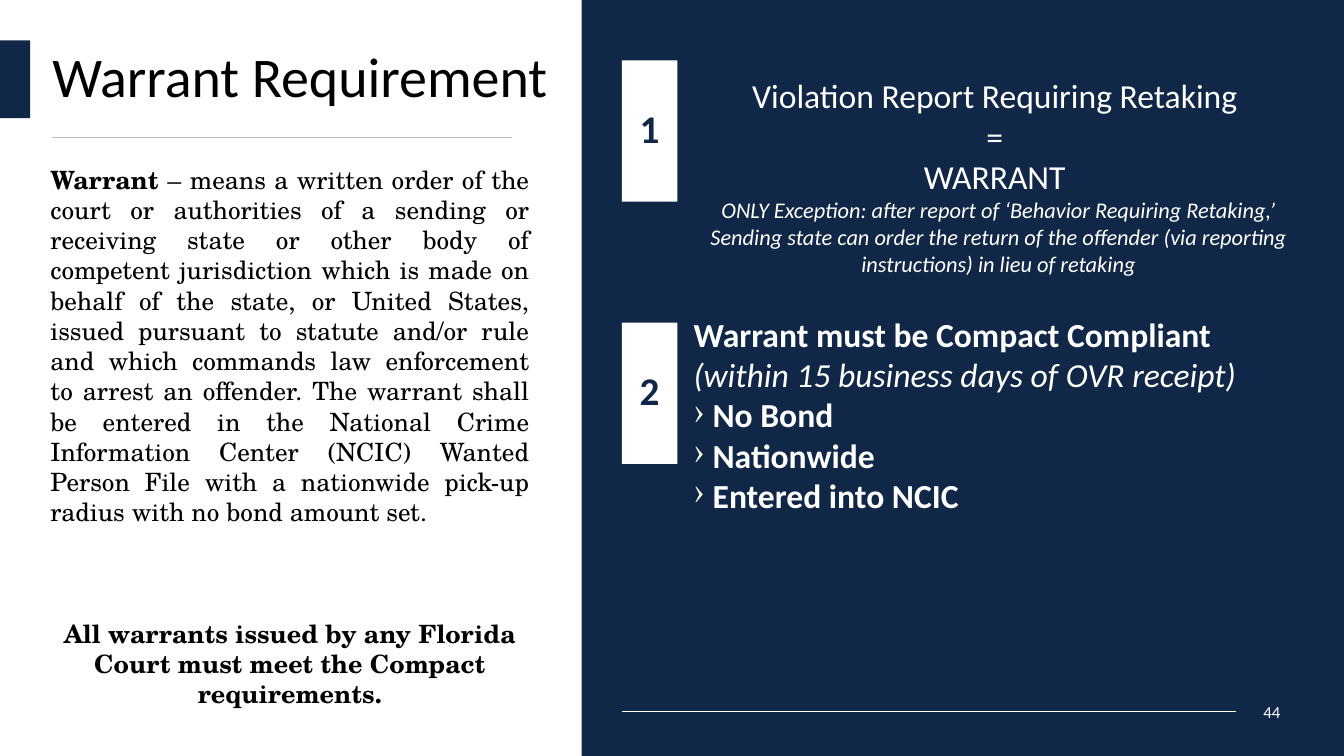
from lxml.etree import SubElement
from pptx import Presentation
from pptx.dml.color import RGBColor
from pptx.enum.shapes import MSO_CONNECTOR as Link, MSO_SHAPE as Shape
from pptx.enum.text import MSO_ANCHOR as Anchor, PP_ALIGN as Align
from pptx.oxml.ns import qn
from pptx.util import Cm, Pt

NAVY, WHITE, BLACK, GREY = "102747", "FFFFFF", "000000", "BFBFBF"
SANS, SERIF = "Calibri", "TeX Gyre Schola"
WIDE, HIGH = 33.87, 19.05


def color(code):
    return RGBColor.from_string(code)


def block(slide, box, fill):
    shape = slide.shapes.add_shape(Shape.RECTANGLE, *map(Cm, box))
    shape.shadow.inherit = False
    shape.fill.solid()
    shape.fill.fore_color.rgb = color(fill)
    shape.line.fill.background()
    return shape


def rule(slide, left, right, y, shade):
    line = slide.shapes.add_connector(Link.STRAIGHT, Cm(left), Cm(y), Cm(right), Cm(y))
    line.line.color.rgb = color(shade)
    line.line.width = Pt(0.5)
    SubElement(line._element.spPr, qn("a:effectLst"))


def text_box(slide, box, inset=True, anchor=Anchor.TOP):
    frame = slide.shapes.add_textbox(*map(Cm, box)).text_frame
    frame.word_wrap = True
    frame.vertical_anchor = anchor
    if not inset:
        frame.margin_left = frame.margin_right = 0
        frame.margin_top = frame.margin_bottom = 0
    return frame


def add_para(frame, align=Align.LEFT, spacing=None):
    """Use the empty first paragraph, or append another."""
    first = frame.paragraphs[0]
    para = frame.add_paragraph() if first.runs else first
    para.alignment = align
    para.line_spacing = spacing
    return para


def add_run(para, text, size, shade=WHITE, face=SANS, bold=False, italic=False):
    run = para.add_run()
    run.text = text
    font = run.font
    font.size, font.name = Pt(size), face
    font.bold, font.italic = bold, italic
    font.color.rgb = color(shade)


def set_bullet(para, mark):
    props = para._p.get_or_add_pPr()
    props.set("marL", str(Cm(0.48)))
    props.set("indent", str(-Cm(0.48)))
    SubElement(props, qn("a:buChar")).set("char", mark)


def add_badge(slide, box, label):
    frame = block(slide, box, WHITE).text_frame
    frame.vertical_anchor = Anchor.MIDDLE
    add_run(add_para(frame, Align.CENTER, 0.9), label, 28, NAVY, bold=True)


def add_title(slide, left, top, width, height):
    block(slide, (left, top, 0.76, height), NAVY)
    frame = text_box(slide, (left + 1.32, top, width, height), False, Anchor.MIDDLE)
    add_run(add_para(frame, spacing=0.9), "Warrant Requirement", 40, BLACK)
    rule(slide, left + 1.32, left + 12.9, top + 2.43, GREY)


def add_meaning(slide, *box):
    frame = text_box(slide, box)
    para = add_para(frame, Align.JUSTIFY)
    add_run(para, "Warrant ", 18, BLACK, SERIF, bold=True)
    add_run(para, "– means a written order of the court or authorities of a sending or "
            "receiving state or other body of competent jurisdiction which is made on "
            "behalf of the state, or United States, issued pursuant to statute and/or "
            "rule and which commands law enforcement to arrest an offender. The warrant "
            "shall be entered in the National Crime Information Center (NCIC) Wanted "
            "Person File with a nationwide pick-up radius with no bond amount set.",
            18, BLACK, SERIF)
    para = add_para(frame, Align.CENTER)
    para.space_before = Pt(65)
    add_run(para, "All warrants issued by any Florida Court must meet the Compact "
            "requirements.", 18, BLACK, SERIF, bold=True)


def add_report(slide, left, top, width, height):
    add_badge(slide, (left, top, 1.4, 3.56), "1")
    frame = text_box(slide, (left + 1.81, top + 0.38, width - 1.81, height), False)
    for line in ("Violation Report Requiring Retaking ", "= ", "WARRANT "):
        add_run(add_para(frame, Align.CENTER), line, 24)
    add_run(add_para(frame, Align.CENTER),
            "ONLY Exception: after report of ‘Behavior Requiring Retaking,’ Sending "
            "state can order the return of the offender (via reporting instructions) "
            "in lieu of retaking", 16, italic=True)


def add_terms(slide, left, top, width, height):
    add_badge(slide, (left, top, 1.4, 3.56), "2")
    frame = text_box(slide, (left + 1.81, top - 0.23, width - 1.81, height), False)
    para = add_para(frame)
    add_run(para, "Warrant must be Compact Compliant ", 24, bold=True)
    add_run(para, "(within 15 business days of OVR receipt)", 24, italic=True)
    for term in ("No Bond", "Nationwide", "Entered into NCIC"):
        para = add_para(frame)
        set_bullet(para, "›")
        add_run(para, term, 24, bold=True)


def add_footer(slide, left, top, width, height):
    rule(slide, left, left + 15.47, top + height / 2, WHITE)
    frame = text_box(slide, (left + width - 1.07, top, 1.07, height), anchor=Anchor.MIDDLE)
    frame.margin_left = frame.margin_right = 0
    add_run(add_para(frame, Align.CENTER), "44", 12)


def main():
    deck = Presentation()
    deck.slide_width, deck.slide_height = Cm(WIDE), Cm(HIGH)
    slide = deck.slides.add_slide(deck.slide_layouts[6])
    block(slide, (14.66, 0, WIDE - 14.66, HIGH), NAVY)
    add_title(slide, 0, 1.02, 31.27, 1.96)
    add_meaning(slide, 1.02, 4.01, 12.57, 13.34)
    add_report(slide, 15.67, 1.52, 17.18, 5.13)
    add_terms(slide, 15.67, 8.13, 16.87, 5.99)
    add_footer(slide, 15.67, 17.42, 16.92, 1.02)
    deck.save("out.pptx")


if __name__ == "__main__":
    main()
